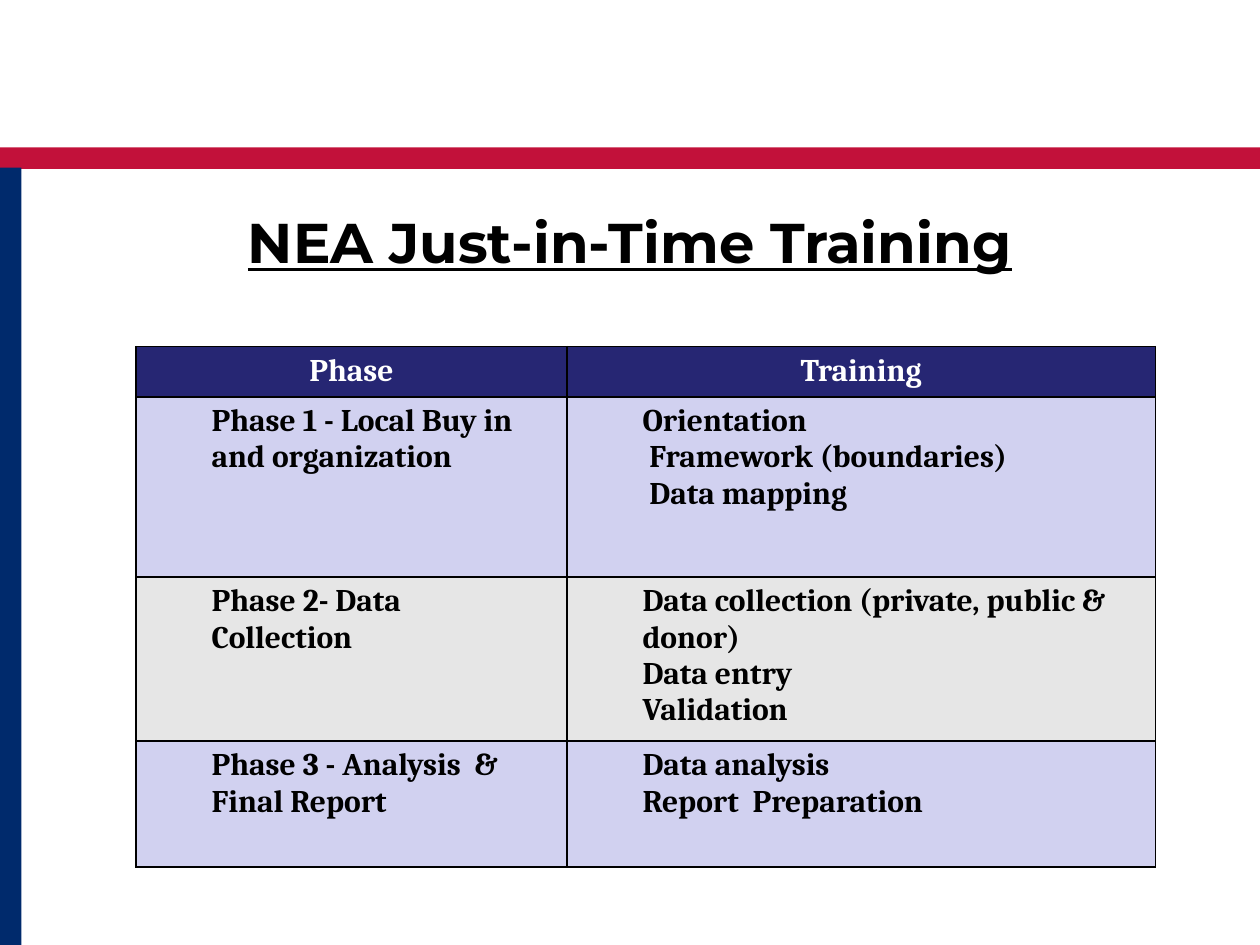
import pptx
import pptx.dml.color
import pptx.enum.shapes
import pptx.enum.text
import pptx.oxml
import pptx.oxml.ns
import pptx.util
from pptx.util import Inches

ALIGN = pptx.enum.text.PP_ALIGN
MIDDLE = pptx.enum.text.MSO_ANCHOR.MIDDLE

PHASES = [
    ("Phase 1 - Local Buy in and organization",
     "Orientation\n Framework (boundaries)\n Data mapping"),
    ("Phase 2- Data  Collection",
     "Data collection (private, public & donor)\nData entry\nValidation"),
    ("Phase 3 - Analysis  & Final Report",
     "Data analysis\nReport  Preparation"),
]
COLUMN_WIDTHS = [3.42, 4.67]
ROW_HEIGHTS = [0.39, 1.43, 1.3, 1]
ROW_FILLS = ["262673", "D1D1F0", "E6E6E6", "D1D1F0"]


def color(value):
    return pptx.dml.color.RGBColor.from_string(value)


def style_paragraph(paragraph, font_name, size, text_color, align):
    paragraph.alignment = align
    for run in paragraph.runs:
        run.font.name = font_name
        run.font.size = pptx.util.Pt(size)
        run.font.bold = True
        run.font.color.rgb = color(text_color)


def add_band(slide, left, top, width, height, fill):
    band = slide.shapes.add_shape(
        pptx.enum.shapes.MSO_SHAPE.RECTANGLE,
        Inches(left), Inches(top), Inches(width), Inches(height))
    band.shadow.inherit = False
    band.fill.solid()
    band.fill.fore_color.rgb = color(fill)
    band.line.fill.background()


def add_title(slide, text):
    title = slide.shapes.add_textbox(
        Inches(0.75), Inches(1.58), Inches(8.5), Inches(0.67))
    frame = title.text_frame
    frame.word_wrap = True
    frame.vertical_anchor = MIDDLE
    frame.text = text
    heading = frame.paragraphs[0]
    style_paragraph(heading, "Montserrat", 32, "000000", ALIGN.CENTER)
    heading.runs[0].font.underline = True


def set_borders(cell, line_color, width):
    properties = cell._tc.get_or_add_tcPr()
    for position, side in enumerate(("lnL", "lnR", "lnT", "lnB")):
        border = pptx.oxml.parse_xml(
            f'<a:{side} {pptx.oxml.ns.nsdecls("a")} w="{pptx.util.Pt(width)}">'
            f'<a:solidFill><a:srgbClr val="{line_color}"/></a:solidFill></a:{side}>')
        properties.insert(position, border)


def fill_cell(cell, text, fill, is_header):
    cell.fill.solid()
    cell.fill.fore_color.rgb = color(fill)
    set_borders(cell, "000000", 1)
    cell.text_frame.text = text
    for paragraph in cell.text_frame.paragraphs:
        if is_header:
            style_paragraph(paragraph, "Cambria", 18, "FFFFFF", ALIGN.CENTER)
        else:
            paragraph.level = 1
            indents = paragraph._p.get_or_add_pPr()
            indents.set("marL", str(Inches(0.5)))
            indents.set("indent", "0")
            style_paragraph(paragraph, "Cambria", 18, "000000", ALIGN.LEFT)


def add_training_table(slide):
    rows = [("Phase", "Training")] + PHASES
    table = slide.shapes.add_table(
        len(rows), len(COLUMN_WIDTHS), Inches(1.08), Inches(2.75),
        Inches(sum(COLUMN_WIDTHS)), Inches(sum(ROW_HEIGHTS))).table
    for column, width in zip(table.columns, COLUMN_WIDTHS):
        column.width = Inches(width)
    for row_index, (texts, height, fill) in enumerate(
            zip(rows, ROW_HEIGHTS, ROW_FILLS)):
        table.rows[row_index].height = Inches(height)
        for column_index, text in enumerate(texts):
            fill_cell(table.cell(row_index, column_index), text, fill,
                      row_index == 0)


def main():
    presentation = pptx.Presentation()
    presentation.slide_width = Inches(10)
    presentation.slide_height = Inches(7.5)
    slide = presentation.slides.add_slide(presentation.slide_layouts[6])
    add_band(slide, 0, 1.17, 10, 0.17, "C2113A")
    add_band(slide, 0, 1.33, 0.17, 6.17, "002A6C")
    add_title(slide, "NEA Just-in-Time Training")
    add_training_table(slide)
    presentation.save("out.pptx")


if __name__ == "__main__":
    main()
